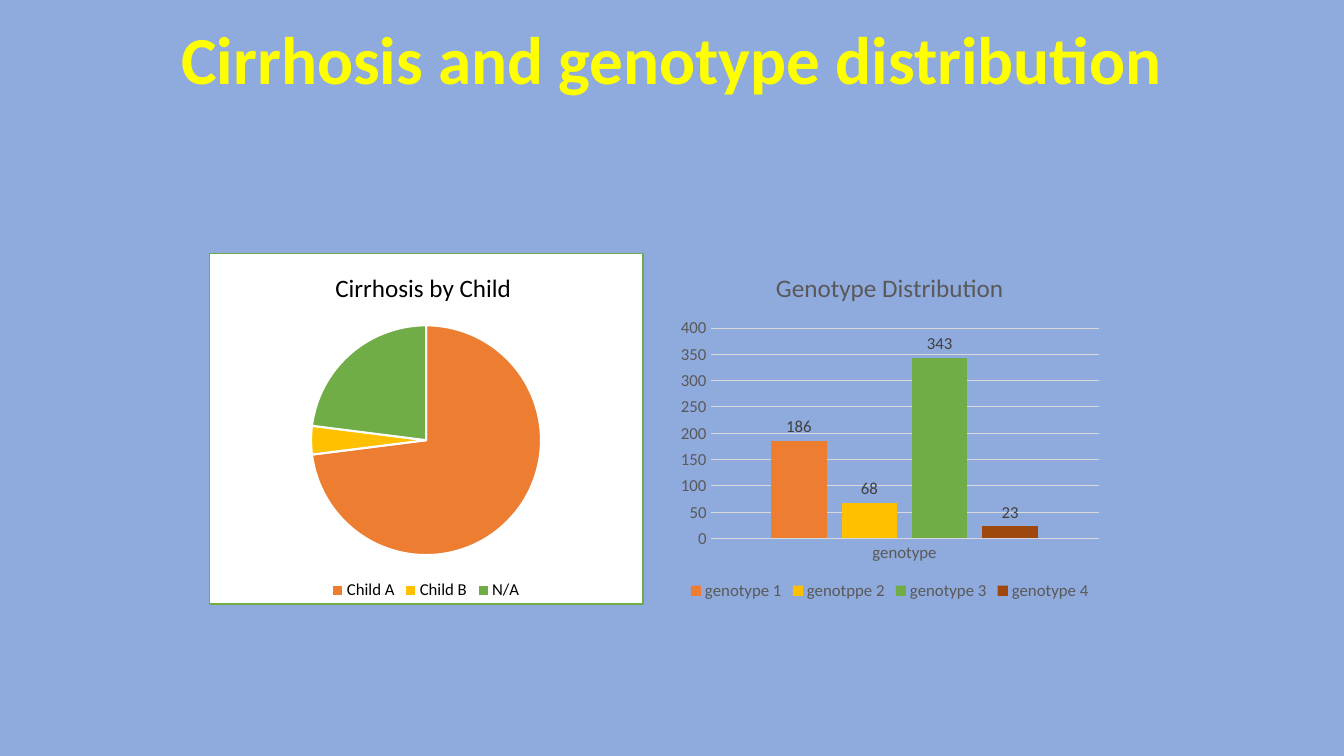
from dataclasses import dataclass

from lxml import etree
from pptx import Presentation
from pptx.chart.chart import Chart
from pptx.chart.data import CategoryChartData
from pptx.dml.color import RGBColor
from pptx.enum.chart import (XL_CHART_TYPE, XL_LABEL_POSITION,
                             XL_LEGEND_POSITION, XL_TICK_MARK)
from pptx.enum.text import MSO_ANCHOR, MSO_AUTO_SIZE, PP_ALIGN
from pptx.oxml import parse_xml
from pptx.oxml.ns import nsdecls, qn
from pptx.util import Pt

PIE, COLUMN = XL_CHART_TYPE.PIE, XL_CHART_TYPE.COLUMN_CLUSTERED
BOTTOM, OUTSIDE_END = XL_LEGEND_POSITION.BOTTOM, XL_LABEL_POSITION.OUTSIDE_END
NO_TICK = XL_TICK_MARK.NONE
TOP, CENTER = MSO_ANCHOR.TOP, PP_ALIGN.CENTER
GROW = MSO_AUTO_SIZE.SHAPE_TO_FIT_TEXT
FONT = "Calibri"
COLORS = {
    "background": "8FAADC", "title": "FFFF00", "black": "000000",
    "white": "FFFFFF", "text": "595959", "label": "404040", "grid": "D9D9D9",
    "orange": "ED7D31", "gold": "FFC000", "green": "70AD47", "brown": "9E480E",
}
PALETTE = ["orange", "gold", "green", "brown"]


@dataclass
class ChartSpec:
    title: str
    kind: XL_CHART_TYPE
    left: float
    categories: list[str]
    series: dict[str, list[int]]
    color: str
    frame: str


CHARTS = [
    ChartSpec("Cirrhosis by Child ", PIE, 149, ["Child A", "Child B", "N/A"],
              {"Series 1": [73, 4, 23]}, "black",
              f'<a:solidFill><a:srgbClr val="{COLORS["white"]}"/></a:solidFill>'
              f'<a:ln w="{Pt(1)}"><a:solidFill><a:srgbClr val="{COLORS["green"]}"/>'
              '</a:solidFill></a:ln>'),
    ChartSpec("Genotype Distribution", COLUMN, 480.2, ["genotype"],
              {"genotype 1": [186], "genotppe 2": [68],
               "genotype 3": [343], "genotype 4": [23]}, "text",
              '<a:noFill/><a:ln><a:noFill/></a:ln>'),
]


def rgb(name: str) -> RGBColor:
    return RGBColor.from_string(COLORS[name])


def set_font(font, size: float, color: str, bold: bool = False) -> None:
    for key, value in {"name": FONT, "size": Pt(size), "bold": bold}.items():
        setattr(font, key, value)
    font.color.rgb = rgb(color)


def set_fill(fmt, color: str) -> None:
    fmt.fill.solid()
    fmt.fill.fore_color.rgb = rgb(color)


def set_line(line, color: str, width: float) -> None:
    line.color.rgb = rgb(color)
    line.width = Pt(width)


def frame_chart(chart: Chart, frame: str) -> None:
    """Give the chart area its fill and border, with square corners."""
    space = chart.element
    body = space.find(qn("c:chart"))
    body.addnext(parse_xml(f'<c:spPr {nsdecls("c", "a")}>{frame}</c:spPr>'))
    if space.find(qn("c:roundedCorners")) is None:
        corners = etree.Element(qn("c:roundedCorners"), val="0")
        space.insert(len(space.findall(qn("c:date1904"))), corners)


def style_pie(chart: Chart) -> None:
    plot = chart.plots[0]
    plot.vary_by_categories = True
    for i in range(len(plot.categories)):
        fmt = plot.series[0].points[i].format
        set_fill(fmt, PALETTE[i])
        set_line(fmt.line, "white", 1.5)


def style_columns(chart: Chart) -> None:
    plot = chart.plots[0]
    for key, value in {"gap_width": 219, "overlap": -27,
                       "vary_by_categories": False}.items():
        setattr(plot, key, value)
    for series, color in zip(plot.series, PALETTE):
        set_fill(series.format, color)
        labels = series.data_labels
        labels.show_value = True
        labels.position = OUTSIDE_END
        set_font(labels.font, 12, "label")
    for axis in (chart.category_axis, chart.value_axis):
        axis.major_tick_mark = axis.minor_tick_mark = NO_TICK
        set_font(axis.tick_labels.font, 12, "text")
    set_line(chart.category_axis.format.line, "grid", 0.75)
    chart.value_axis.format.line.fill.background()
    set_line(chart.value_axis.major_gridlines.format.line, "grid", 0.75)


def add_chart(s, spec: ChartSpec) -> None:
    data = CategoryChartData()
    data.categories = spec.categories
    for name, values in spec.series.items():
        data.add_series(name, values)
    chart = s.shapes.add_chart(spec.kind, Pt(spec.left), Pt(180.7),
                               Pt(310.7), Pt(251.3), data).chart
    set_font(chart.font, 10, "black")
    frame_chart(chart, spec.frame)
    chart.has_title = True
    p = chart.chart_title.text_frame.paragraphs[0]
    r = p.add_run()
    r.text = spec.title
    set_font(r.font, 18, spec.color)
    chart.has_legend = True
    chart.legend.position = BOTTOM
    chart.legend.include_in_layout = False
    set_font(chart.legend.font, 12, spec.color)
    if spec.kind == PIE:
        style_pie(chart)
    else:
        style_columns(chart)


def main() -> None:
    prs = Presentation()
    prs.slide_width, prs.slide_height = Pt(960), Pt(540)
    s = prs.slides.add_slide(prs.slide_layouts[5])
    set_fill(s.background, "background")

    # Title
    sp = s.shapes.title
    for key, value in {"left": 0, "top": 8.6, "width": 960, "height": 65.5}.items():
        setattr(sp, key, Pt(value))
    tf = sp.text_frame
    for key, value in {"word_wrap": True, "vertical_anchor": TOP,
                       "auto_size": GROW}.items():
        setattr(tf, key, value)
    p = tf.paragraphs[0]
    p.alignment = CENTER
    r = p.add_run()
    r.text = "Cirrhosis and genotype distribution"
    set_font(r.font, 48, "title", bold=True)

    # Charts
    for spec in CHARTS:
        add_chart(s, spec)
    prs.save("out.pptx")


if __name__ == "__main__":
    main()
